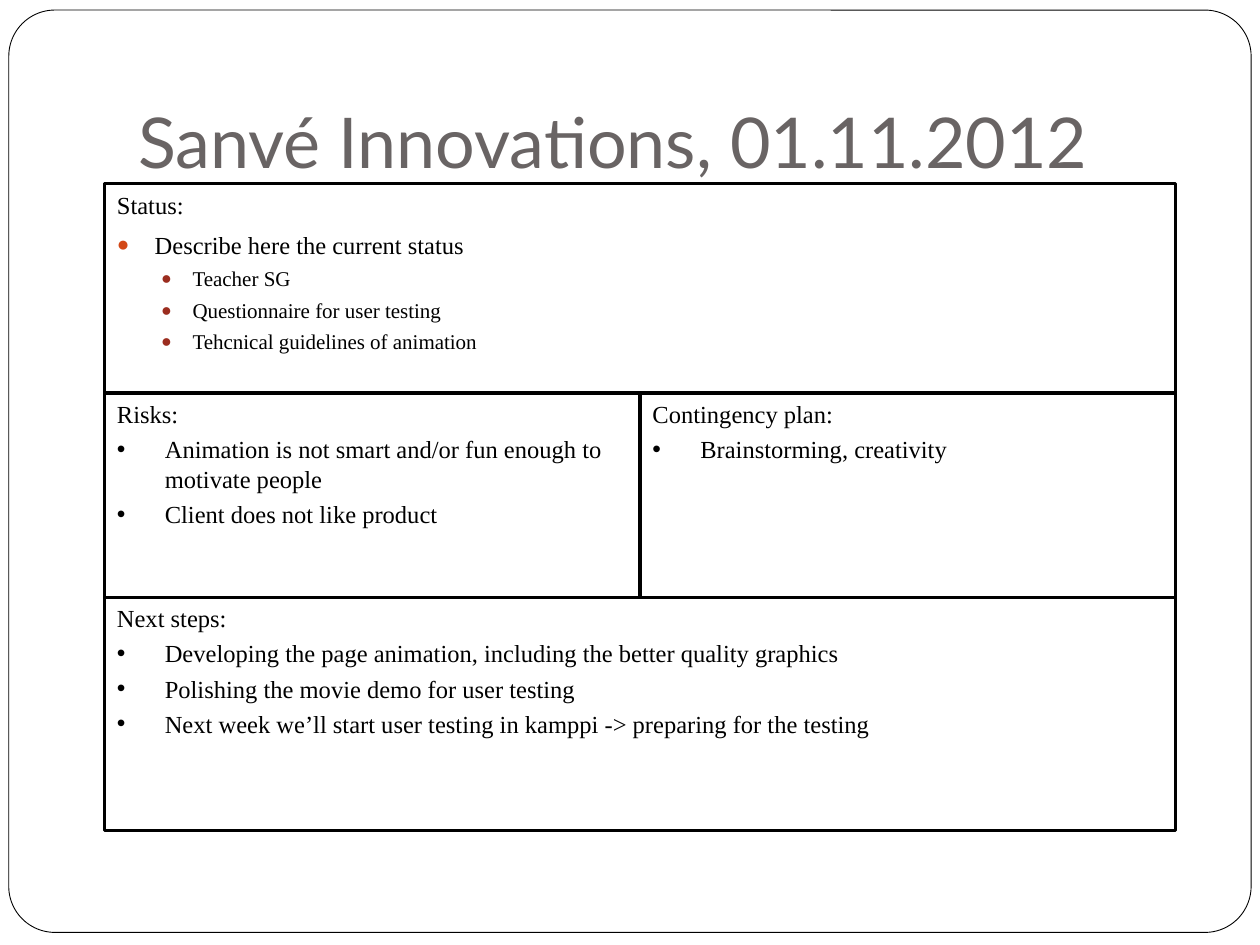
from lxml.etree import SubElement
from pptx import Presentation
from pptx.dml.color import RGBColor
from pptx.enum.shapes import MSO_SHAPE as Shape
from pptx.enum.text import MSO_ANCHOR as Anchor, PP_ALIGN as Align
from pptx.oxml.ns import qn
from pptx.util import Inches, Pt

HUES = {"ink": "000000", "paper": "FFFFFF", "title": "696464",
        "orange": "D34817", "red": "9B2D1F"}
BODY = "Times New Roman"

# Paragraph styles: size, space before, left margin, indent, bullet, its colour
STATUS = {
    "head": (14, 5.8, 0.3, -0.3, None, None),
    "item": (14, 5.8, 0.3, -0.3, "●", "orange"),
    "sub": (12, 3.7, 0.6, -0.25, "●", "red"),
}
PLAIN = {
    "head": (14, 3.2, 0.38, -0.38, None, None),
    "item": (14, 3.2, 0.38, -0.38, "•", None),
}


def color(name):
    return RGBColor.from_string(HUES[name])


def set_bullet(props, char, hue):
    if not char:
        SubElement(props, qn("a:buNone"))
        return
    if hue:
        tint = SubElement(props, qn("a:buClr"))
        SubElement(tint, qn("a:srgbClr"), val=HUES[hue])
        SubElement(props, qn("a:buSzPct"), val="85000")
    SubElement(props, qn("a:buFont"), typeface="Arial")
    SubElement(props, qn("a:buChar"), char=char)


def set_font(para, name, size, hue):
    font = para.font
    font.name, font.size = name, Pt(size)
    font.color.rgb = color(hue)


def add_frame(slide, left, top, width, height):
    frame = slide.shapes.add_shape(
        Shape.ROUNDED_RECTANGLE, Inches(left), Inches(top),
        Inches(width), Inches(height))
    frame.adjustments[0] = 0.05
    frame.shadow.inherit = False
    frame.fill.solid()
    frame.fill.fore_color.rgb = color("paper")
    frame.line.color.rgb = color("ink")
    frame.line.width = Pt(0.5)


def add_title(slide, left, top, width, height, text):
    box = slide.shapes.add_textbox(
        Inches(left), Inches(top), Inches(width), Inches(height))
    frame = box.text_frame
    frame.word_wrap = True
    frame.vertical_anchor = Anchor.BOTTOM
    frame.margin_bottom = Inches(0.1)
    para = frame.paragraphs[0]
    para.text = text
    set_font(para, "Lato", 40, "title")


def add_panel(slide, left, top, width, height, styles, lines):
    """Draw an outlined box holding (style, text) lines."""
    box = slide.shapes.add_shape(
        Shape.RECTANGLE, Inches(left), Inches(top),
        Inches(width), Inches(height))
    box.shadow.inherit = False
    box.fill.background()
    box.line.color.rgb = color("ink")
    box.line.width = Pt(1.75)
    frame = box.text_frame
    frame.word_wrap = True
    frame.vertical_anchor = Anchor.TOP
    for i, (style, text) in enumerate(lines):
        size, before, margin, indent, char, hue = styles[style]
        para = frame.add_paragraph() if i else frame.paragraphs[0]
        para.text = text
        para.alignment = Align.LEFT
        para.level = 1 if style == "sub" else 0
        para.space_before = Pt(before)
        props = para._p.get_or_add_pPr()
        props.set("marL", str(Inches(margin)))
        props.set("indent", str(Inches(indent)))
        set_bullet(props, char, hue)
        set_font(para, BODY, size, "ink")


def add_report(slide, left, top, width):
    """Stack status, risks beside contingency plan, and next steps."""
    half = width / 2
    high, mid, low = 1.66, 1.62, 1.85
    add_panel(slide, left, top, width, high, STATUS, [
        ("head", "Status:"),
        ("item", "Describe here the current status"),
        ("sub", "Teacher SG"),
        ("sub", "Questionnaire for user testing"),
        ("sub", "Tehcnical guidelines of animation"),
    ])
    top += high
    add_panel(slide, left, top, half, mid, PLAIN, [
        ("head", "Risks:"),
        ("item", "Animation is not smart and/or fun enough to motivate people"),
        ("item", "Client does not like product"),
    ])
    add_panel(slide, left + half, top, half, mid, PLAIN, [
        ("head", "Contingency plan:"),
        ("item", "Brainstorming, creativity"),
    ])
    top += mid
    add_panel(slide, left, top, width, low, PLAIN, [
        ("head", "Next steps:"),
        ("item", "Developing the page animation, including the better quality graphics"),
        ("item", "Polishing the movie demo for user testing"),
        ("item", "Next week we’ll start user testing in kamppi -> preparing for the testing"),
    ])


def main():
    deck = Presentation()
    deck.slide_width, deck.slide_height = Inches(10), Inches(7.5)
    slide = deck.slides.add_slide(deck.slide_layouts[6])
    add_frame(slide, 0.07, 0.08, 9.86, 7.32)
    add_title(slide, 1, 0.3, 8.5, 1.25, "Sanvé Innovations, 01.11.2012")
    add_report(slide, 0.83, 1.46, 8.5)
    deck.save("out.pptx")


if __name__ == "__main__":
    main()
